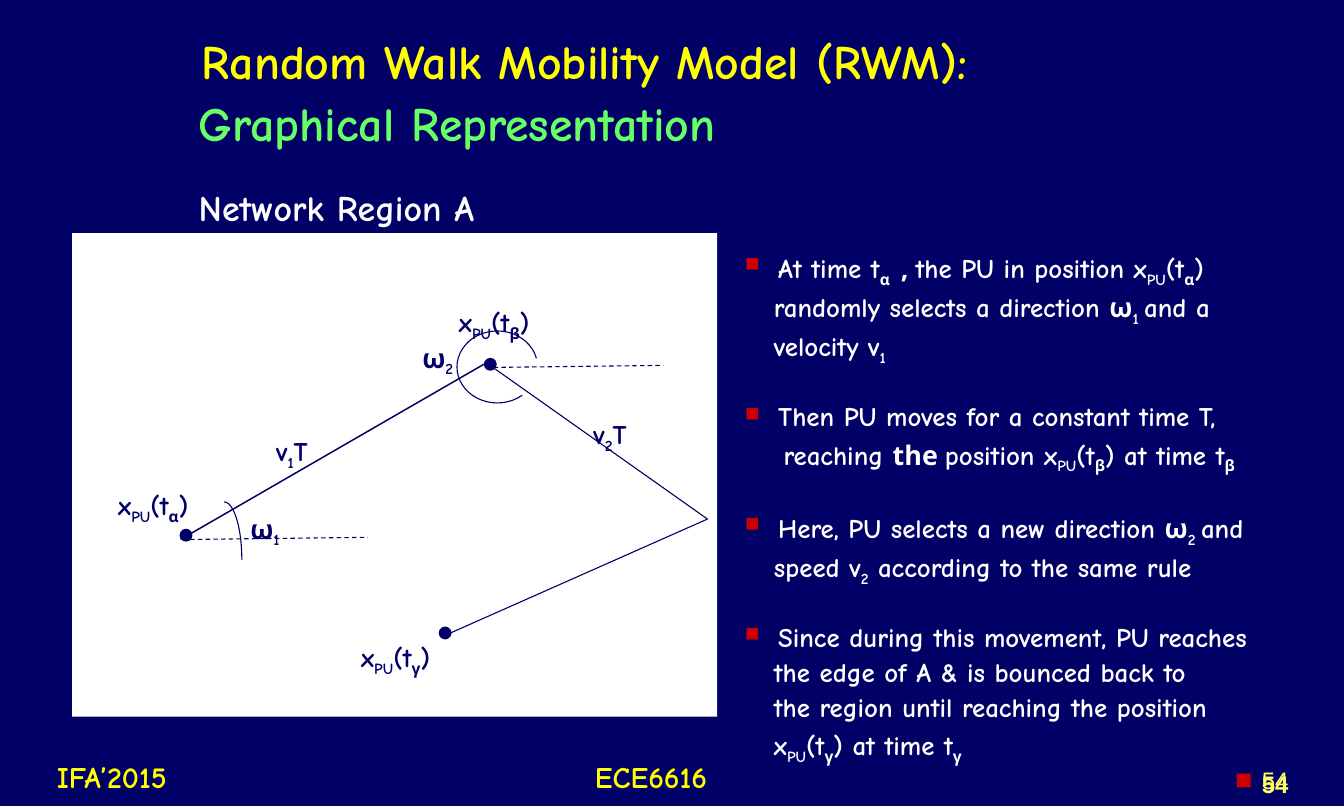
from dataclasses import dataclass

from lxml.etree import SubElement
from pptx import Presentation
from pptx.dml.color import RGBColor
from pptx.enum.dml import MSO_LINE_DASH_STYLE as Dash
from pptx.enum.shapes import MSO_CONNECTOR as Connector
from pptx.enum.shapes import MSO_SHAPE as Preset
from pptx.enum.text import MSO_ANCHOR as Anchor
from pptx.enum.text import PP_ALIGN as Align
from pptx.oxml.ns import qn
from pptx.slide import Slide
from pptx.util import Inches, Pt

NAVY = RGBColor(0x00, 0x00, 0x66)
WHITE = RGBColor(0xFF, 0xFF, 0xFF)
YELLOW = RGBColor(0xFF, 0xFF, 0x00)
PALE_YELLOW = RGBColor(0xFF, 0xFF, 0x66)
GREEN = RGBColor(0x66, 0xFF, 0x66)
RED = RGBColor(0xCC, 0x00, 0x00)

MAIN_FONT = "Comic Neue"
GREEK_FONT = "Noto Sans"
GREEK = "αβγ"
SUBSCRIPT = "_"
GREEK_STYLE = "~"


@dataclass
class Line:
    text: str
    color: RGBColor = NAVY
    size: float = 18
    font: str = MAIN_FONT
    bold: bool = True
    align: Align = Align.LEFT
    margin: float = 0
    bullet: int = 0
    before: float = 0
    spacing: float = 0.9


@dataclass
class TextBox:
    left: float
    top: float
    width: float
    height: float
    lines: list[Line]
    wrap: bool = False
    inset_top: float = 0.1
    anchor: Anchor = Anchor.TOP


@dataclass
class Segment:
    start: tuple[float, float]
    end: tuple[float, float]
    width: float = 0.75
    dashed: bool = False


@dataclass
class Arc:
    left: float
    top: float
    width: float
    height: float
    angles: tuple[float, ...] = ()


def body_line(text: str, margin: float = 0.27) -> Line:
    return Line(text, WHITE, margin=margin, before=4)


def body_bullet(text: str, before: float = 27) -> Line:
    return Line(text, WHITE, margin=0.31, bullet=75, before=before)


TITLE = TextBox(1.58, 0.39, 9.86, 0.92, [
    Line("Random Walk Mobility Model (RWM):", YELLOW, 32, margin=0.2, spacing=1),
    Line("Graphical Representation", GREEN, 32, margin=0.17, before=3.5, spacing=1),
], wrap=True, inset_top=0.05, anchor=Anchor.MIDDLE)

BODY = TextBox(6.83, 2.25, 5.67, 4.71, [
    body_bullet("At time t|_α |~ , |the PU in position x|_PU|(t|_α|)", before=0),
    body_line("randomly selects a direction ω|_1 |and a"),
    body_line("velocity v|_1"),
    body_bullet("Then PU moves for a constant time T,"),
    body_line("reaching |~the |position x|_PU|(t|_β|) at time t|_β", margin=0.36),
    body_bullet("Here, PU selects a new direction ω|_2 |and"),
    body_line("speed v|_2| according to the same rule"),
    body_bullet("Since during this movement, PU reaches"),
    body_line("the edge of A & is bounced back to"),
    body_line("the region until reaching the position"),
    body_line("x|_PU|(t|_γ|) at time t|_γ"),
], wrap=True)

REGION_NAME = TextBox(1.67 + 0.08, 1.67, 3.5, 0.47,
                      [Line("Network Region A", WHITE, 24)], wrap=True)

FOOTERS = [
    TextBox(left, 7, width, 0.41, [Line(text, YELLOW, 20, align=Align.CENTER)])
    for left, width, text in [(0.3, 1.48, "IFA’2015"), (5.35, 1.41, "ECE6616")]
]

PAGE_NUMBERS = [
    TextBox(11.25, top, 0.83, 0.33,
            [Line("54", PALE_YELLOW, 16, "Arial", bold, Align.RIGHT, margin, bullet, spacing=1)],
            wrap=True, inset_top=0.05)
    for top, bold, margin, bullet in [(7.08, False, 0, 0), (7.11, True, 0.25, 100)]
]

LABELS = [
    TextBox(left, top, width, 0.38, [Line(text)])
    for left, top, width, text in [
        (1, 4.45, 0.99, "x|_PU|(t|_α|)"),
        (4.17, 2.75, 0.99, "x|_PU|(t|_β|)"),
        (3.26, 5.87, 0.99, "x|_PU|(t|_γ|)"),
        (2.47, 3.95, 0.61, "v|_1|T"),
        (5.42, 3.79, 0.61, "v|_2|T"),
        (2.23, 4.67, 0.6, "ω|_1"),
        (3.83, 3.08, 0.5, "ω|_2"),
    ]
]

POSITIONS = [(1.67, 4.92), (4.5, 3.33), (4.08, 5.83)]
DOT_SIZE = 0.12
SEGMENTS = [
    Segment((1.68, 5.02), (4.5, 3.39), width=1),
    Segment((4.6, 3.43), (6.58, 4.83)),
    Segment((6.58, 4.83), (4.1, 5.93)),
    Segment((1.77, 5.02), (3.42, 5), dashed=True),
    Segment((4.52, 3.42), (6.17, 3.4), dashed=True),
]
ARCS = [
    Arc(1.92, 4.67, 0.33, 1.08),
    Arc(4.25, 3.08, 0.75, 0.67, (29.29, 208.57)),
]


def apply_format(target: object, values: dict[str, object]) -> None:
    for name, value in values.items():
        setattr(target, name, value)


def add_line(paragraph, line: Line) -> None:
    properties = paragraph._p.get_or_add_pPr()
    properties.set("marL", str(Inches(line.margin)))
    apply_format(paragraph, {"alignment": line.align, "line_spacing": line.spacing,
                             "space_before": Pt(line.before)})
    if line.bullet:
        properties.set("indent", str(-Inches(line.margin)))
        color = SubElement(properties, qn("a:buClr"))
        SubElement(color, qn("a:srgbClr"), val=str(RED))
        SubElement(properties, qn("a:buSzPct"), val=str(line.bullet * 1000))
        SubElement(properties, qn("a:buChar"), char="■")
    for part in line.text.split("|"):
        subscript = part.startswith(SUBSCRIPT)
        run = paragraph.add_run()
        run.text = part.lstrip(SUBSCRIPT + GREEK_STYLE)
        greek = part.startswith(GREEK_STYLE) or any(letter in GREEK for letter in part)
        apply_format(run.font, {"name": GREEK_FONT if greek else line.font,
                                "size": Pt(line.size), "bold": line.bold})
        run.font.color.rgb = line.color
        if subscript:
            run.font._element.set("baseline", "-25000")


def add_text(slide: Slide, box: TextBox) -> None:
    shape = slide.shapes.add_textbox(*map(Inches, (box.left, box.top, box.width, box.height)))
    frame = shape.text_frame
    apply_format(frame, {"word_wrap": box.wrap, "margin_top": Inches(box.inset_top),
                         "vertical_anchor": box.anchor})
    for index, line in enumerate(box.lines):
        add_line(frame.add_paragraph() if index else frame.paragraphs[0], line)


def add_filled(slide: Slide, preset: Preset, bounds: tuple[float, ...], color: RGBColor) -> None:
    shape = slide.shapes.add_shape(preset, *map(Inches, bounds))
    shape.shadow.inherit = False
    shape.fill.solid()
    shape.fill.fore_color.rgb = color
    shape.line.fill.background()


def add_segment(slide: Slide, segment: Segment) -> None:
    ends = map(Inches, segment.start + segment.end)
    connector = slide.shapes.add_connector(Connector.STRAIGHT, *ends)
    connector.line.color.rgb = NAVY
    connector.line.width = Pt(segment.width)
    if segment.dashed:
        connector.line.dash_style = Dash.DASH
    SubElement(connector._element.spPr, qn("a:effectLst"))


def add_arc(slide: Slide, arc: Arc) -> None:
    bounds = map(Inches, (arc.left, arc.top, arc.width, arc.height))
    shape = slide.shapes.add_shape(Preset.ARC, *bounds)
    shape.shadow.inherit = False
    for index, angle in enumerate(arc.angles):
        shape.adjustments[index] = angle
    shape.fill.background()
    shape.line.color.rgb = NAVY
    shape.line.width = Pt(0.75)


def main() -> None:
    presentation = Presentation()
    apply_format(presentation, {"slide_width": Inches(12.5), "slide_height": Inches(7.5)})
    slide = presentation.slides.add_slide(presentation.slide_layouts[6])
    slide.background.fill.solid()
    slide.background.fill.fore_color.rgb = NAVY
    add_filled(slide, Preset.RECTANGLE, (0.67, 2.17, 6, 4.5), WHITE)
    for left, top in POSITIONS:
        add_filled(slide, Preset.OVAL, (left, top, DOT_SIZE, DOT_SIZE), NAVY)
    for segment in SEGMENTS:
        add_segment(slide, segment)
    for arc in ARCS:
        add_arc(slide, arc)
    for box in [TITLE, REGION_NAME, *LABELS, BODY, *FOOTERS, *PAGE_NUMBERS]:
        add_text(slide, box)
    presentation.save("out.pptx")


if __name__ == "__main__":
    main()
